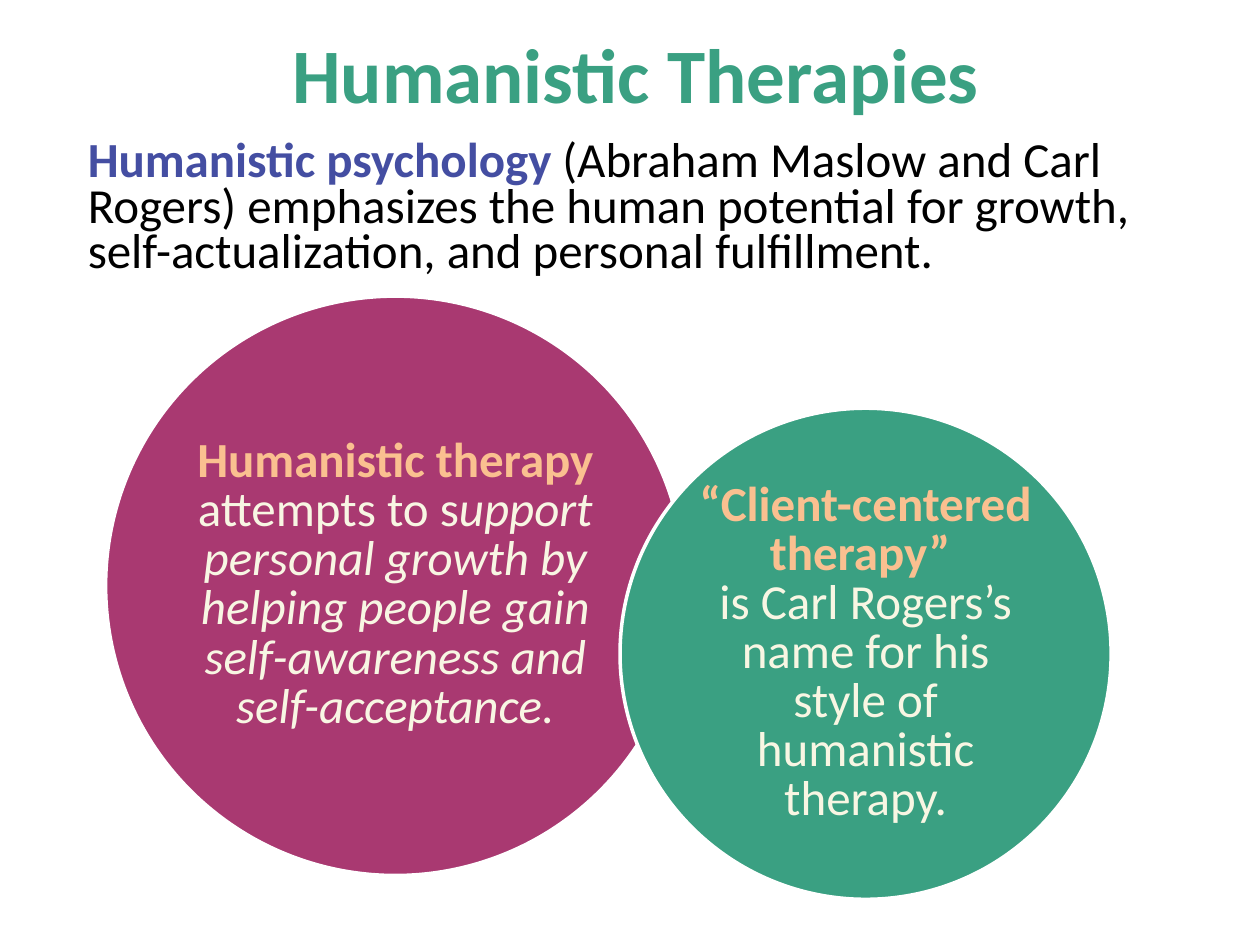
from dataclasses import dataclass

import pptx
import pptx.dml.color
import pptx.enum.shapes
import pptx.enum.text
import pptx.util

Cm = pptx.util.Cm
Pt = pptx.util.Pt
Align = pptx.enum.text.PP_ALIGN
Anchor = pptx.enum.text.MSO_ANCHOR


@dataclass(frozen=True)
class Theme:
    font: str = "Calibri"
    title_size: int = 44
    text_size: int = 28
    green: str = "3AA082"
    plum: str = "A93971"
    blue: str = "444EA2"
    peach: str = "FAC090"
    cream: str = "F8F6E3"
    black: str = "000000"
    white: str = "FFFFFF"


THEME = Theme()


@dataclass(frozen=True)
class Span:
    text: str
    color: str
    bold: bool = False
    italic: bool = False
    size: int = THEME.text_size


@dataclass(frozen=True)
class Circle:
    left: float
    top: float
    diameter: float
    fill: str
    paras: list[list[Span]]


def rgb(value: str) -> pptx.dml.color.RGBColor:
    return pptx.dml.color.RGBColor.from_string(value)


def set_values(target: object, values: dict) -> None:
    for name, value in values.items():
        setattr(target, name, value)


def write_text(frame: pptx.text.text.TextFrame, paras: list[list[Span]],
               para_format: dict) -> None:
    frame.word_wrap = True
    for index, spans in enumerate(paras):
        para = frame.add_paragraph() if index else frame.paragraphs[0]
        set_values(para, para_format)
        for span in spans:
            run = para.add_run()
            run.text = span.text
            set_values(run.font, {"name": THEME.font, "size": Pt(span.size),
                                  "bold": span.bold, "italic": span.italic})
            run.font.color.rgb = rgb(span.color)


def draw_circle(page: pptx.slide.Slide, circle: Circle) -> None:
    shape = page.shapes.add_shape(
        pptx.enum.shapes.MSO_SHAPE.OVAL, Cm(circle.left), Cm(circle.top),
        Cm(circle.diameter), Cm(circle.diameter))
    shape.shadow.inherit = False
    shape.fill.solid()
    shape.fill.fore_color.rgb = rgb(circle.fill)
    shape.line.color.rgb = rgb(THEME.white)
    shape.line.width = Pt(2)
    # An oval's text area is its inscribed square, so no margins are needed
    margins = dict.fromkeys(
        ("margin_left", "margin_top", "margin_right", "margin_bottom"), 0)
    set_values(shape.text_frame, {"vertical_anchor": Anchor.MIDDLE, **margins})
    write_text(shape.text_frame, circle.paras,
               {"alignment": Align.CENTER, "line_spacing": Pt(28)})


def draw_text(page: pptx.slide.Slide, left: float, top: float, width: float,
              height: float, spans: list[Span], frame_format: dict,
              para_format: dict) -> None:
    box = page.shapes.add_textbox(Cm(left), Cm(top), Cm(width), Cm(height))
    set_values(box.text_frame, frame_format)
    write_text(box.text_frame, [spans], para_format)


TITLE = [Span("Humanistic Therapies", THEME.green, bold=True,
              size=THEME.title_size)]
INTRO = [
    Span("Humanistic psychology ", THEME.blue, bold=True),
    Span("(Abraham Maslow and Carl Rogers) emphasizes the human potential for "
         "growth, self-actualization, and personal fulfillment.", THEME.black),
]
CIRCLES = [
    Circle(2.13, 5.97, 11.68, THEME.plum, [[
        Span("Humanistic therapy ", THEME.peach, bold=True),
        Span("attempts to s", THEME.cream),
        Span("upport personal growth by helping people gain self-awareness "
             "and self-acceptance.", THEME.cream, italic=True),
    ]]),
    Circle(12.5, 8.23, 9.9, THEME.green, [
        [Span("“Client-centered therapy” ", THEME.peach, bold=True)],
        [Span("is Carl Rogers’s name for his style of humanistic therapy.",
              THEME.cream)],
    ]),
]


def main() -> None:
    deck = pptx.Presentation()
    set_values(deck, {"slide_width": Cm(25.4), "slide_height": Cm(19.05)})
    page = deck.slides.add_slide(deck.slide_layouts[6])

    # Overlapping circles, back to front
    for circle in CIRCLES:
        draw_circle(page, circle)

    # Title and introduction
    draw_text(page, 1.8, 0.41, 22.05, 2.13, TITLE,
              {"vertical_anchor": Anchor.MIDDLE}, {"alignment": Align.CENTER})
    draw_text(page, 1.52, 2.74, 22.91, 3.07, INTRO,
              {"auto_size": pptx.enum.text.MSO_AUTO_SIZE.SHAPE_TO_FIT_TEXT},
              {"line_spacing": Pt(26), "space_after": Pt(6)})

    deck.save("out.pptx")


if __name__ == "__main__":
    main()
